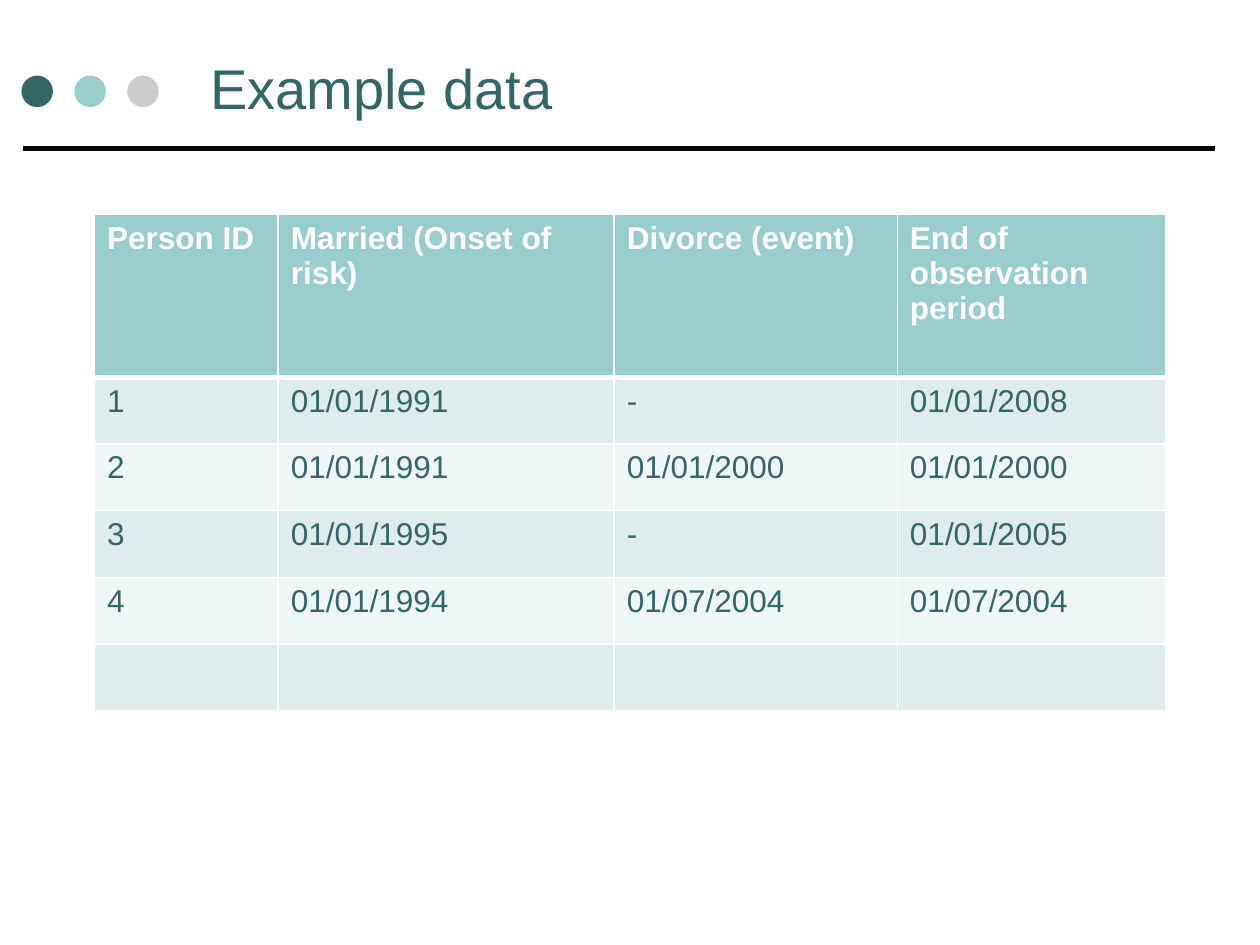
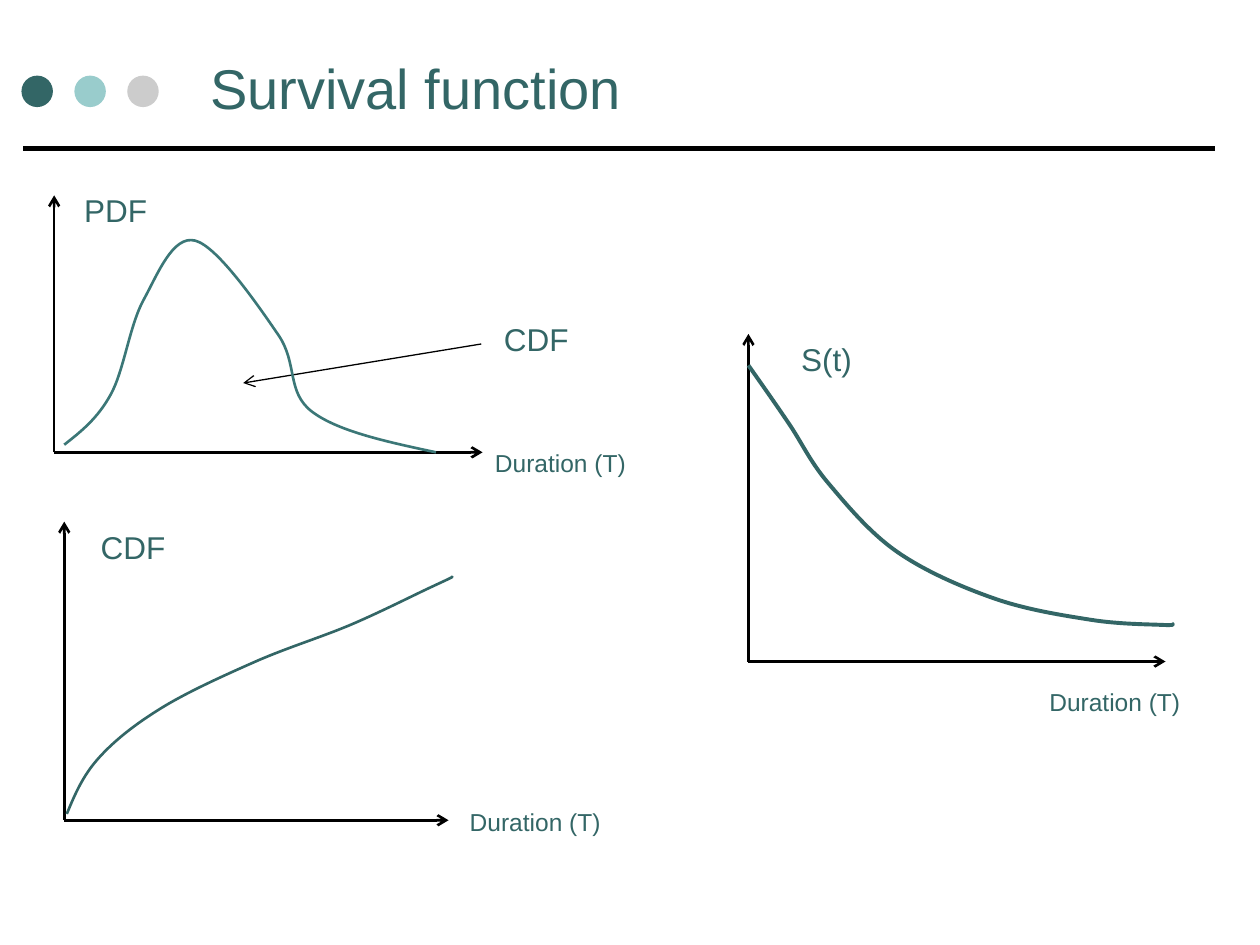
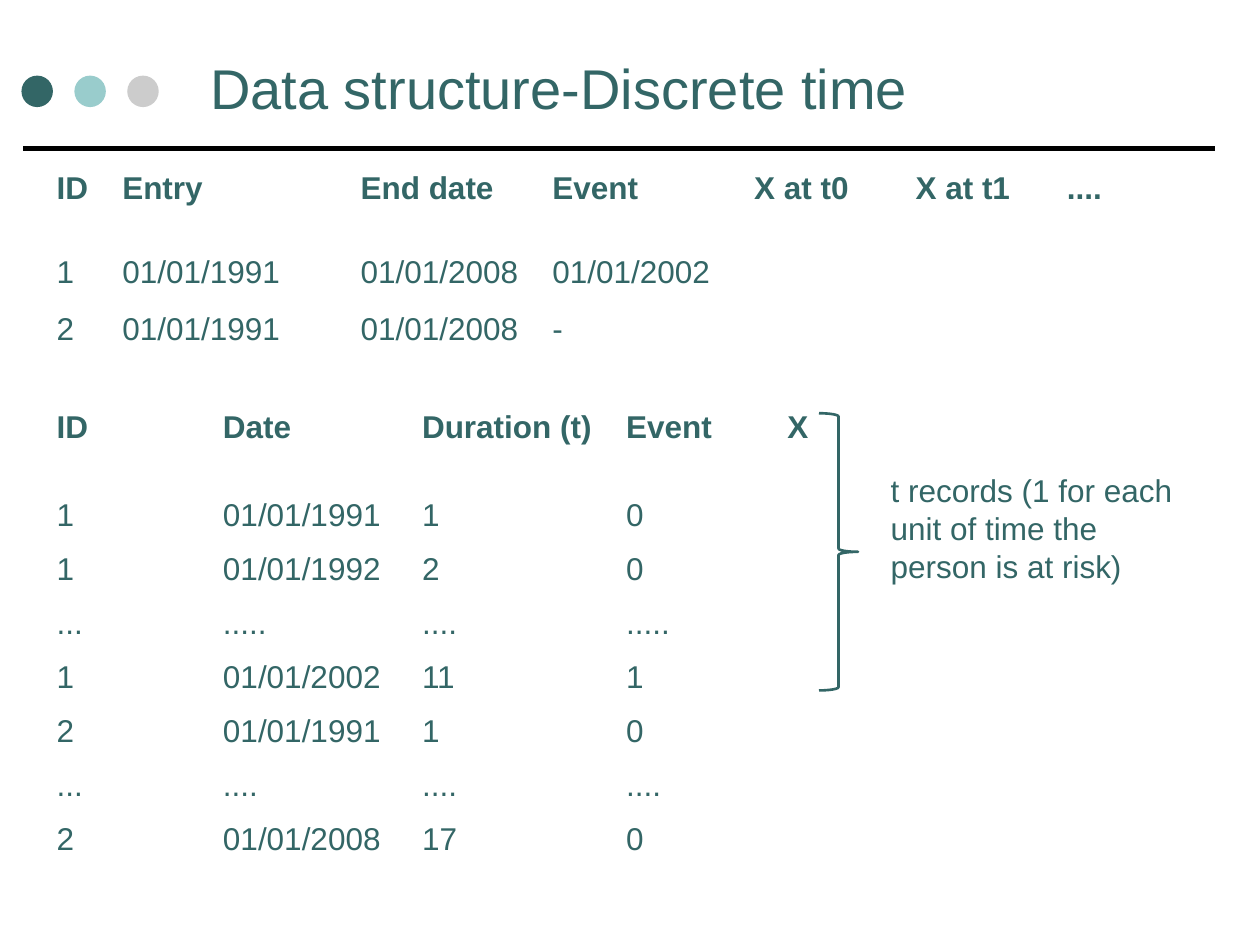
"""Builds three slides on survival data: a table, three curves and record layouts."""
from dataclasses import dataclass

from lxml import etree
from pptx import Presentation
from pptx.dml.color import RGBColor
from pptx.enum.shapes import MSO_CONNECTOR, MSO_SHAPE
from pptx.enum.text import MSO_ANCHOR
from pptx.oxml.ns import qn
from pptx.util import Inches, Pt

STRAIGHT = MSO_CONNECTOR.STRAIGHT
OVAL, BRACE = MSO_SHAPE.OVAL, MSO_SHAPE.RIGHT_BRACE
TOP, MIDDLE = MSO_ANCHOR.TOP, MSO_ANCHOR.MIDDLE


@dataclass(frozen=True)
class Theme:
    """Colours, font, table styles and type sizes of the deck."""
    font: str = "Arial"
    dark: str = "336666"
    light: str = "99CCCC"
    grey: str = "CCCCCC"
    black: str = "000000"
    white: str = "FFFFFF"
    curve: str = "3B7777"
    bands: tuple = ("DEECEC", "EFF6F6")
    lined: str = "{5C22544A-7EE6-4342-B048-85BDC9FD1C3A}"
    plain: str = "{2D5ABB26-0587-4C30-8999-92F81FD0307C}"
    title: int = 32
    body: int = 18
    small: int = 14


T = Theme()
WIDE, HIGH = 10, 7.5

COUPLES = {
    "box": (0.75, 1.7, 8.5, 3.94),
    "cols": [1.46, 2.67, 2.25, 2.13],
    "rows": [1.3] + [0.53] * 5,
    "cells": [
        ["Person ID", "Married (Onset of risk)", "Divorce (event)", "End of observation period"],
        ["1", "01/01/1991", "-", "01/01/2008"],
        ["2", "01/01/1991", "01/01/2000", "01/01/2000"],
        ["3", "01/01/1995", "-", "01/01/2005"],
        ["4", "01/01/1994", "01/07/2004", "01/07/2004"],
        [],
    ],
    "style": T.lined,
    "head": (T.light, T.white),
    "bands": T.bands,
    "edges": {0: {"lnL": 1, "lnR": 1, "lnT": 1, "lnB": 3}},
}

SPELLS = {
    "box": (0.35, 1.31, 9.06, 1.86),
    "cols": [0.52, 1.89, 1.52, 1.6, 1.28, 1.2, 1.04],
    "rows": [0.66, 0.46, 0.74],
    "cells": [
        ["ID", "Entry", "End date", "Event", "X at t0", "X at t1", "...."],
        ["1", "01/01/1991", "01/01/2008", "01/01/2002"],
        ["2", "01/01/1991", "01/01/2008", "-"],
    ],
    "style": T.plain,
    "head": (None, T.dark),
    "bands": (None,),
    "edges": {},
}

RECORDS = {
    "box": (0.35, 3.2, 9.21, 3.7),
    "cols": [1.32, 1.58, 1.62, 1.28, 1.02, 1.07, 1.32],
    "rows": [0.7] + [0.43] * 7,
    "cells": [
        ["ID", "Date", "Duration (t)", "Event", "X"],
        ["1", "01/01/1991", "1", "0"],
        ["1", "01/01/1992", "2", "0"],
        ["...", ".....", "....", "....."],
        ["1", "01/01/2002", "11", "1"],
        ["2", "01/01/1991", "1", "0"],
        ["...", "....", "....", "...."],
        ["2", "01/01/2008", "17", "0"],
    ],
    "style": T.plain,
    "head": (None, T.dark),
    "bands": (T.white, None),
    "alpha": 20,
    "edges": {0: {"lnT": 1, "lnB": 1}, 7: {"lnB": 1}},
}

GRAPHS = [
    {"name": "CDF", "label": (0.7, 4.14, 0.76, 0.39), "time": (3.63, 6.36, 1.53, 0.34),
     "zero": (0.51, 6.51), "top": 4.14, "right": 3.56,
     "color": T.dark, "width": 1.5,
     "knots": [(0.53, 6.46), (0.78, 6.02), (1.28, 5.62), (2.03, 5.25),
               (2.78, 4.96), (3.4, 4.67), (3.57, 4.59), (3.58, 4.58)]},
    {"name": "PDF", "label": (0.57, 1.47, 0.72, 0.4), "time": (3.83, 3.51, 1.26, 0.34),
     "zero": (0.43, 3.59), "top": 1.55, "right": 3.83,
     "color": T.curve, "width": 1.5,
     "knots": [(0.51, 3.53), (0.88, 3.13), (1.14, 2.38), (1.55, 1.91),
               (2.21, 2.66), (2.48, 3.27), (3.46, 3.59)]},
    {"name": "S(t)", "label": (6.26, 2.65, 0.79, 0.4), "time": (8.23, 5.4, 1.53, 0.34),
     "zero": (5.94, 5.25), "top": 2.65, "right": 9.25,
     "color": T.dark, "width": 2.25,
     "knots": [(5.94, 2.9), (6.26, 3.36), (6.57, 3.83), (7.12, 4.38),
               (7.89, 4.75), (8.66, 4.92), (9.22, 4.96), (9.3, 4.95)]},
]


def rgb(color):
    return RGBColor.from_string(color)


def style(frame, size, color, bold=False):
    look = {"name": T.font, "size": Pt(size), "bold": bold}
    for part in frame.paragraphs:
        for key, value in look.items():
            setattr(part.font, key, value)
        part.font.color.rgb = rgb(color)


def write(slide, text, box, size=T.body, anchor=TOP):
    frame = slide.shapes.add_textbox(*map(Inches, box)).text_frame
    form = {"word_wrap": True, "vertical_anchor": anchor, "text": text}
    for key, value in form.items():
        setattr(frame, key, value)
    style(frame, size, T.dark)


def stroke(shape, color, width):
    shape.line.color.rgb = rgb(color)
    shape.line.width = Pt(width)


def rule(slide, start, end, width, arrow=True):
    line = slide.shapes.add_connector(STRAIGHT, *map(Inches, start + end))
    stroke(line, T.black, width)
    etree.SubElement(line._element.spPr, qn("a:effectLst"))
    if arrow:
        etree.SubElement(line.line._get_or_add_ln(), qn("a:tailEnd"), type="arrow")


def begin(deck, title):
    slide = deck.slides.add_slide(deck.slide_layouts[6])
    rule(slide, (9.64, 1.18), (0.18, 1.18), 3, arrow=False)
    for i, color in enumerate((T.dark, T.light, T.grey)):
        box = (0.17 + 0.42 * i, 0.6, 0.25, 0.25)
        dot = slide.shapes.add_shape(OVAL, *map(Inches, box))
        dot.shadow.inherit = False
        dot.fill.solid()
        dot.fill.fore_color.rgb = rgb(color)
        dot.line.fill.background()
    write(slide, title, (1.57, 0.2, 8.07, 0.98), T.title, MIDDLE)
    return slide


def paint(cell, color, alpha):
    if color is None:
        return
    cell.fill.solid()
    cell.fill.fore_color.rgb = rgb(color)
    if alpha:
        tint = cell._tc.tcPr.find(f".//{qn('a:srgbClr')}")
        etree.SubElement(tint, qn("a:alpha"), val=str(alpha * 1000))


def edge(cell, widths):
    props = cell._tc.get_or_add_tcPr()
    for i, (side, width) in enumerate(widths.items()):
        line = etree.Element(qn(f"a:{side}"), w=str(Pt(width)))
        fill = etree.SubElement(line, qn("a:solidFill"))
        etree.SubElement(fill, qn("a:srgbClr"), val=T.white)
        props.insert(i, line)


def share(parts, total):
    return [Inches(part * total / sum(parts)) for part in parts]


def grid(slide, data):
    box, bands = data["box"], data["bands"]
    cols, rows = share(data["cols"], box[2]), share(data["rows"], box[3])
    table = slide.shapes.add_table(len(rows), len(cols), *map(Inches, box)).table
    table.horz_banding = False
    table._tbl.tblPr.find(qn("a:tableStyleId")).text = data["style"]
    for col, width in zip(table.columns, cols):
        col.width = width
    for r, (row, height, texts) in enumerate(zip(table.rows, rows, data["cells"])):
        row.height = height
        fill, ink = (bands[(r - 1) % len(bands)], T.dark) if r else data["head"]
        for c, cell in enumerate(row.cells):
            cell.text = texts[c] if c < len(texts) else ""
            style(cell.text_frame, T.body, ink, r == 0)
            paint(cell, fill, data.get("alpha"))
            edge(cell, data["edges"].get(r, {}))


def bends(knots):
    """Return two control points for each stretch between knots."""
    def lean(i, sign):
        (a, b), (x, y), (c, d) = knots[i - 1:i + 2]
        return x + sign * (c - a) / 6, y + sign * (d - b) / 6

    def half(p, q):
        return (p[0] + q[0]) / 2, (p[1] + q[1]) / 2

    last = len(knots) - 1
    pairs = []
    for i in range(last):
        out = lean(i, 1) if i else half(knots[0], lean(1, -1))
        back = lean(i + 1, -1) if i + 1 < last else half(knots[last], out)
        pairs.append((out, back))
    return pairs


def bow(slide, knots):
    """Add one open curve that runs smoothly through the knots."""
    first, *rest = [tuple(map(Inches, knot)) for knot in knots]
    pen = slide.shapes.build_freeform(*first)
    pen.add_line_segments(rest, close=False)
    curve = pen.convert_to_shape()
    lines = list(curve._element.iter(qn("a:lnTo")))
    for line, pair in zip(lines, bends(knots)):
        line.tag = qn("a:cubicBezTo")
        for i, (x, y) in enumerate(pair):
            spot = etree.Element(qn("a:pt"), x=str(Inches(x) - curve.left), y=str(Inches(y) - curve.top))
            line.insert(i, spot)
    return curve


def plot(slide, graph):
    zero = graph["zero"]
    rule(slide, zero, (zero[0], graph["top"]), 1.5)
    rule(slide, zero, (graph["right"], zero[1]), 1.5)
    curve = bow(slide, graph["knots"])
    curve.shadow.inherit = False
    curve.fill.background()
    stroke(curve, graph["color"], graph["width"])
    write(slide, "Duration (T)", graph["time"], T.small)
    write(slide, graph["name"], graph["label"])


def main():
    deck = Presentation()
    deck.slide_width, deck.slide_height = Inches(WIDE), Inches(HIGH)

    grid(begin(deck, "Example data"), COUPLES)

    slide = begin(deck, "Survival function")
    rule(slide, (3.82, 2.73), (1.93, 3.04), 0.75)
    for graph in GRAPHS:
        plot(slide, graph)
    write(slide, "CDF", (3.9, 2.49, 0.89, 0.4))

    slide = begin(deck, "Data structure-Discrete time")
    for data in (SPELLS, RECORDS):
        grid(slide, data)
    brace = slide.shapes.add_shape(BRACE, *map(Inches, (6.5, 3.28, 0.31, 2.2)))
    brace.shadow.inherit = False
    brace.fill.background()
    stroke(brace, T.dark, 1.5)
    write(slide, "t records (1 for each unit of time the person is at risk)",
          (6.97, 3.69, 2.44, 1.01))

    deck.save("out.pptx")


if __name__ == "__main__":
    main()
